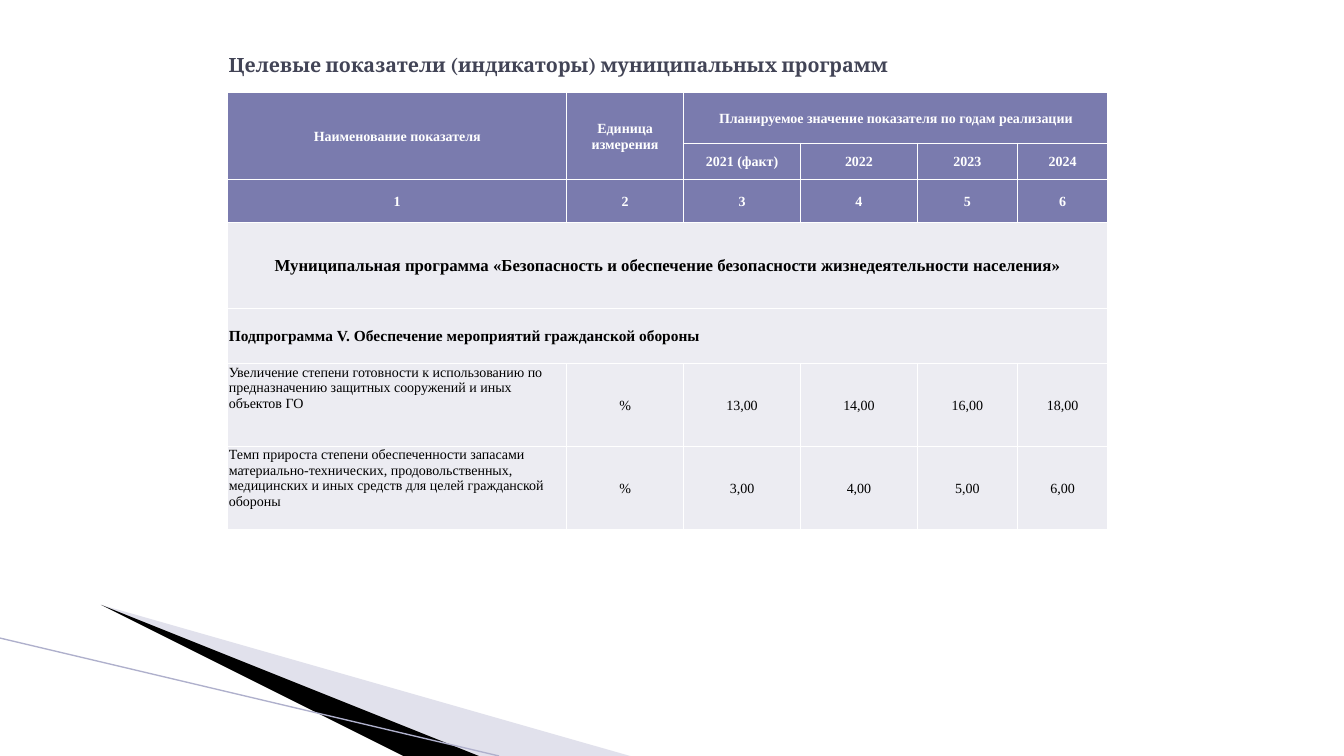
"""Builds the slide with target indicators of municipal programmes."""
import pptx
import pptx.dml.color
import pptx.enum.shapes
import pptx.enum.text
import pptx.oxml
import pptx.oxml.ns
import pptx.util

THEME = {
    "heading": "424456", "header": "7A7BAE", "body": "ECECF2", "grid": "FFFFFF",
    "header_text": "FFFFFF", "body_text": "000000",
    "pale_wedge": "B6B6D1", "dark_wedge": "000000", "edge": "AFB0CC",
    "heading_font": "Cambria", "table_font": "Times New Roman",
    "heading_size": 14, "programme_size": 12, "subprogramme_size": 11, "cell_size": 10,
}
WIDTH, HEIGHT = 13.33, 7.5
COLUMNS = [3.36, 1.16, 1.16, 1.16, 0.99, 0.9]
ROWS = [0.5, 0.36, 0.43, 0.85, 0.55, 0.82, 0.82]
HEADER_ROWS, PROGRAMME_ROW, SUBPROGRAMME_ROW = 3, 3, 4
LAST = len(COLUMNS) - 1
MERGES = [(0, 0, 1, 0), (0, 1, 1, 1), (0, 2, 0, LAST),
          (PROGRAMME_ROW, 0, PROGRAMME_ROW, LAST),
          (SUBPROGRAMME_ROW, 0, SUBPROGRAMME_ROW, LAST)]
INDICATORS = [
    ["Наименование показателя", "Единица измерения",
     "Планируемое значение показателя по годам реализации"],
    ["", "", "2021 (факт)", "2022", "2023", "2024"],
    ["1", "2", "3", "4", "5", "6"],
    ["Муниципальная программа «Безопасность и обеспечение безопасности жизнедеятельности населения»"],
    ["Подпрограмма V. Обеспечение мероприятий гражданской обороны"],
    ["Увеличение степени готовности к использованию по предназначению защитных сооружений и иных объектов ГО",
     "%", "13,00", "14,00", "16,00", "18,00"],
    ["Темп прироста степени обеспеченности запасами материально-технических, продовольственных, "
     "медицинских и иных средств для целей гражданской обороны",
     "%", "3,00", "4,00", "5,00", "6,00"],
]
WEDGES = [
    ("pale_wedge", 40, [(0.73, 6.5), (7.93, HEIGHT), (6.08, HEIGHT)]),
    ("dark_wedge", 100, [(0.71, 6.49), (6.09, HEIGHT), (4.96, HEIGHT)]),
]

inch = pptx.util.Inches
anchors = pptx.enum.text.MSO_ANCHOR
aligns = pptx.enum.text.PP_ALIGN


def rgb(role):
    return pptx.dml.color.RGBColor.from_string(THEME[role])


def write(paragraph, text, font, size, colour, bold):
    run = paragraph.add_run()
    run.text = text
    run.font.color.rgb = rgb(colour)
    look = {"name": THEME[font], "size": pptx.util.Pt(THEME[size]), "bold": bold}
    for key, value in look.items():
        setattr(run.font, key, value)


deck = pptx.Presentation()
deck.slide_width, deck.slide_height = inch(WIDTH), inch(HEIGHT)
slide = deck.slides.add_slide(deck.slide_layouts[6])

for colour, opacity, corners in WEDGES:
    outline = slide.shapes.build_freeform(*corners[0], scale=inch(1))
    outline.add_line_segments(corners[1:], close=True)
    wedge = outline.convert_to_shape()
    wedge.shadow.inherit = False
    wedge.fill.solid()
    wedge.fill.fore_color.rgb = rgb(colour)
    wedge.line.fill.background()
    if opacity < 100:
        tint = next(wedge.fill._xPr.iter(pptx.oxml.ns.qn("a:srgbClr")))
        alpha = pptx.oxml.parse_xml(f'<a:alpha {pptx.oxml.ns.nsdecls("a")} val="{opacity * 1000}"/>')
        tint.append(alpha)

edge = slide.shapes.add_connector(pptx.enum.shapes.MSO_CONNECTOR.STRAIGHT,
                                  0, inch(6.33), inch(4.95), inch(HEIGHT))
edge.line.color.rgb = rgb("edge")
edge.line.width = pptx.util.Pt(0.95)
edge._element.spPr.append(pptx.oxml.parse_xml(f'<a:effectLst {pptx.oxml.ns.nsdecls("a")}/>'))

heading = slide.shapes.add_textbox(inch(2.17), inch(0.3), inch(9), inch(0.69)).text_frame
heading.word_wrap = True
heading.vertical_anchor = anchors.MIDDLE
write(heading.paragraphs[0], "Целевые показатели (индикаторы) муниципальных программ",
      "heading_font", "heading_size", "heading", True)

table = slide.shapes.add_table(len(ROWS), len(COLUMNS), inch(2.26), inch(0.92),
                               inch(sum(COLUMNS)), inch(sum(ROWS))).table
for column, width in zip(table.columns, COLUMNS):
    column.width = inch(width)
for row, height in zip(table.rows, ROWS):
    row.height = inch(height)
for top, left, bottom, right in MERGES:
    table.cell(top, left).merge(table.cell(bottom, right))

sizes = {PROGRAMME_ROW: "programme_size", SUBPROGRAMME_ROW: "subprogramme_size"}
for r in range(len(ROWS)):
    band = "header" if r < HEADER_ROWS else "body"
    for c in range(len(COLUMNS)):
        cell = table.cell(r, c)
        indicator_name = r > SUBPROGRAMME_ROW and c == 0
        cell_format = {
            "margin_left": inch(0.01), "margin_right": inch(0.01),
            "margin_top": inch(0.01), "margin_bottom": 0,
            "vertical_anchor": anchors.TOP if indicator_name else anchors.MIDDLE,
        }
        for key, value in cell_format.items():
            setattr(cell, key, value)
        for side in ("lnL", "lnR", "lnT", "lnB"):
            cell._tc.get_or_add_tcPr().append(pptx.oxml.parse_xml(
                f'<a:{side} {pptx.oxml.ns.nsdecls("a")} w="12700"><a:solidFill>'
                f'<a:srgbClr val="{THEME["grid"]}"/></a:solidFill></a:{side}>'))
        cell.fill.solid()
        cell.fill.fore_color.rgb = rgb(band)
        if c < len(INDICATORS[r]) and INDICATORS[r][c]:
            entry = cell.text_frame.paragraphs[0]
            left_aligned = indicator_name or r == SUBPROGRAMME_ROW
            entry.alignment = aligns.LEFT if left_aligned else aligns.CENTER
            write(entry, INDICATORS[r][c], "table_font", sizes.get(r, "cell_size"),
                  f"{band}_text", r <= SUBPROGRAMME_ROW)

deck.save("out.pptx")
